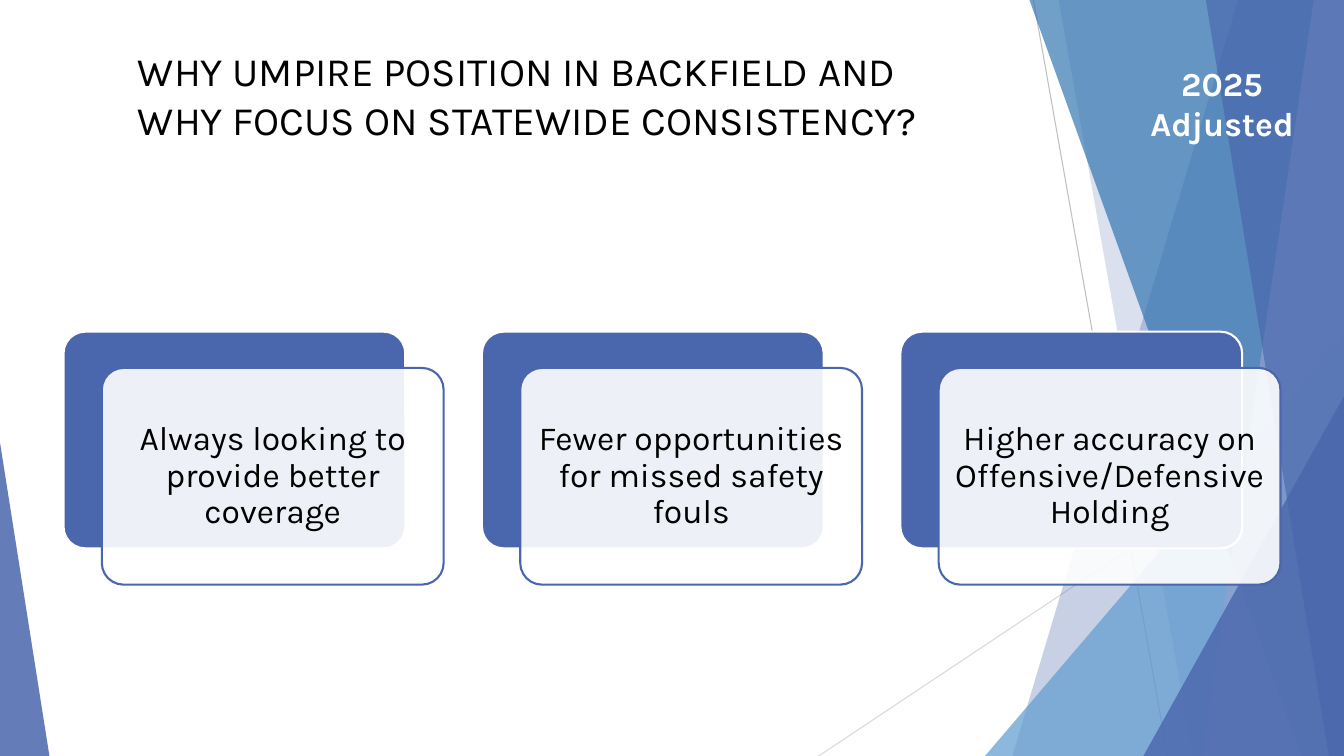
from dataclasses import dataclass

from lxml import etree
from pptx import Presentation
from pptx.dml.color import RGBColor
from pptx.enum.shapes import MSO_CONNECTOR, MSO_SHAPE
from pptx.enum.text import MSO_ANCHOR, PP_ALIGN
from pptx.oxml.ns import qn
from pptx.util import Inches, Pt


@dataclass(frozen=True)
class Theme:
    font: str = "Karla"
    blue: str = "4A66AC"
    sky: str = "629DD1"
    ocean: str = "3477B2"
    lavender: str = "90A2CF"
    white: str = "FFFFFF"
    black: str = "000000"
    gray: str = "BFBFBF"
    light_gray: str = "D9D9D9"
    title_size: float = 28.8
    body_size: float = 24
    outline: float = 1.5
    hairline: float = 0.75


THEME = Theme()
WIDTH, HEIGHT = 13.33, 7.5


def paint(shape, color, opacity=100, outline=None):
    shape.shadow.inherit = False
    shape.fill.solid()
    shape.fill.fore_color.rgb = RGBColor.from_string(color)
    if opacity < 100:
        tint = shape.fill._xPr.find(qn("a:solidFill"))[0]
        etree.SubElement(tint, qn("a:alpha"), val=str(opacity * 1000))
    if outline:
        shape.line.color.rgb = RGBColor.from_string(outline)
        shape.line.width = Pt(THEME.outline)
    else:
        shape.line.fill.background()


def write(shape, text, size, color, align, bold=False, spacing=None):
    frame = shape.text_frame
    frame.word_wrap = True
    frame.text = text
    for paragraph in frame.paragraphs:
        paragraph.alignment = align
        if spacing:
            paragraph.line_spacing = spacing
        for run in paragraph.runs:
            run.font.name = THEME.font
            run.font.size = Pt(size)
            run.font.bold = bold
            run.font.color.rgb = RGBColor.from_string(color)


def add_ray(slide, start, end, color):
    ray = slide.shapes.add_connector(
        MSO_CONNECTOR.STRAIGHT, *(Inches(value) for value in (*start, *end)))
    ray.line.color.rgb = RGBColor.from_string(color)
    ray.line.width = Pt(THEME.hairline)
    etree.SubElement(ray._element.spPr, qn("a:effectLst"))


def add_band(slide, top_left, bottom_left, color, opacity):
    builder = slide.shapes.build_freeform(Inches(top_left), 0)
    builder.add_line_segments([
        (Inches(WIDTH), 0),
        (Inches(WIDTH), Inches(HEIGHT)),
        (Inches(bottom_left), Inches(HEIGHT)),
    ], close=True)
    paint(builder.convert_to_shape(), color, opacity)


def add_corner(slide, left, top, width, apex, color, opacity):
    corner = slide.shapes.add_shape(
        MSO_SHAPE.ISOSCELES_TRIANGLE, Inches(left), Inches(top),
        Inches(width), Inches(HEIGHT - top))
    corner.adjustments[0] = apex
    paint(corner, color, opacity)


def add_backdrop(slide):
    add_ray(slide, (10.25, 0), (11.58, HEIGHT), THEME.gray)
    add_ray(slide, (WIDTH, 4.03), (8.12, HEIGHT), THEME.light_gray)
    add_band(slide, 12.28, 10.04, THEME.blue, 30)
    add_band(slide, 10.5, 11.83, THEME.blue, 20)
    add_corner(slide, 9.77, 3.33, WIDTH - 9.77, 1, THEME.sky, 72)
    add_band(slide, 10.21, 12.91, THEME.ocean, 70)
    add_band(slide, 13.03, 11.92, THEME.lavender, 70)
    add_band(slide, 11.96, 13.18, THEME.blue, 65)
    add_corner(slide, 11.34, 3.93, WIDTH - 11.34, 1, THEME.blue, 80)
    add_corner(slide, 0, 4.39, 0.49, 0, THEME.blue, 85)


def add_edition(slide, left, top, width, height):
    edition = slide.shapes.add_textbox(
        Inches(left), Inches(top), Inches(width), Inches(height))
    write(edition, "2025\nAdjusted", THEME.body_size, THEME.white,
          PP_ALIGN.CENTER, bold=True)


def add_title(slide, left, top, width, height):
    title = slide.shapes.add_textbox(
        Inches(left), Inches(top), Inches(width), Inches(height))
    title.text_frame.vertical_anchor = MSO_ANCHOR.MIDDLE
    write(title,
          "WHY UMPIRE POSITION IN BACKFIELD AND \v"
          "WHY FOCUS ON STATEWIDE CONSISTENCY?",
          THEME.title_size, THEME.black, PP_ALIGN.LEFT)


def add_panel(slide, left, top, width, height):
    panel = slide.shapes.add_shape(
        MSO_SHAPE.ROUNDED_RECTANGLE, Inches(left), Inches(top),
        Inches(width), Inches(height))
    panel.adjustments[0] = 0.1
    return panel


def add_reason(slide, reason, left, top, width, height):
    offset_x, offset_y, inset = 0.38, 0.36, 0.06
    back = add_panel(slide, left, top, width, height)
    paint(back, THEME.blue, outline=THEME.white)
    front = add_panel(slide, left + offset_x, top + offset_y, width, height)
    paint(front, THEME.white, 90, outline=THEME.blue)
    label = slide.shapes.add_textbox(
        Inches(left + offset_x + inset), Inches(top + offset_y + inset),
        Inches(width - 2 * inset), Inches(height - 2 * inset))
    frame = label.text_frame
    frame.vertical_anchor = MSO_ANCHOR.MIDDLE
    frame.margin_left = frame.margin_right = Inches(0.1)
    frame.margin_top = frame.margin_bottom = Inches(0.1)
    write(label, reason, THEME.body_size, THEME.black, PP_ALIGN.CENTER,
          spacing=0.9)


def add_reasons(slide, left, top, pitch):
    reasons = (
        "Always looking to provide better coverage",
        "Fewer opportunities for missed safety fouls",
        "Higher accuracy on Offensive/Defensive Holding",
    )
    for index, reason in enumerate(reasons):
        add_reason(slide, reason, left + index * pitch, top, 3.39, 2.15)


def main():
    presentation = Presentation()
    presentation.slide_width = Inches(WIDTH)
    presentation.slide_height = Inches(HEIGHT)
    slide = presentation.slides.add_slide(presentation.slide_layouts[6])
    add_backdrop(slide)
    add_edition(slide, 11.24, 0.57, 1.76, 0.91)
    add_title(slide, 1.27, 0.41, 11.35, 1.06)
    add_reasons(slide, 0.63, 3.29, 4.15)
    presentation.save("out.pptx")


if __name__ == "__main__":
    main()
